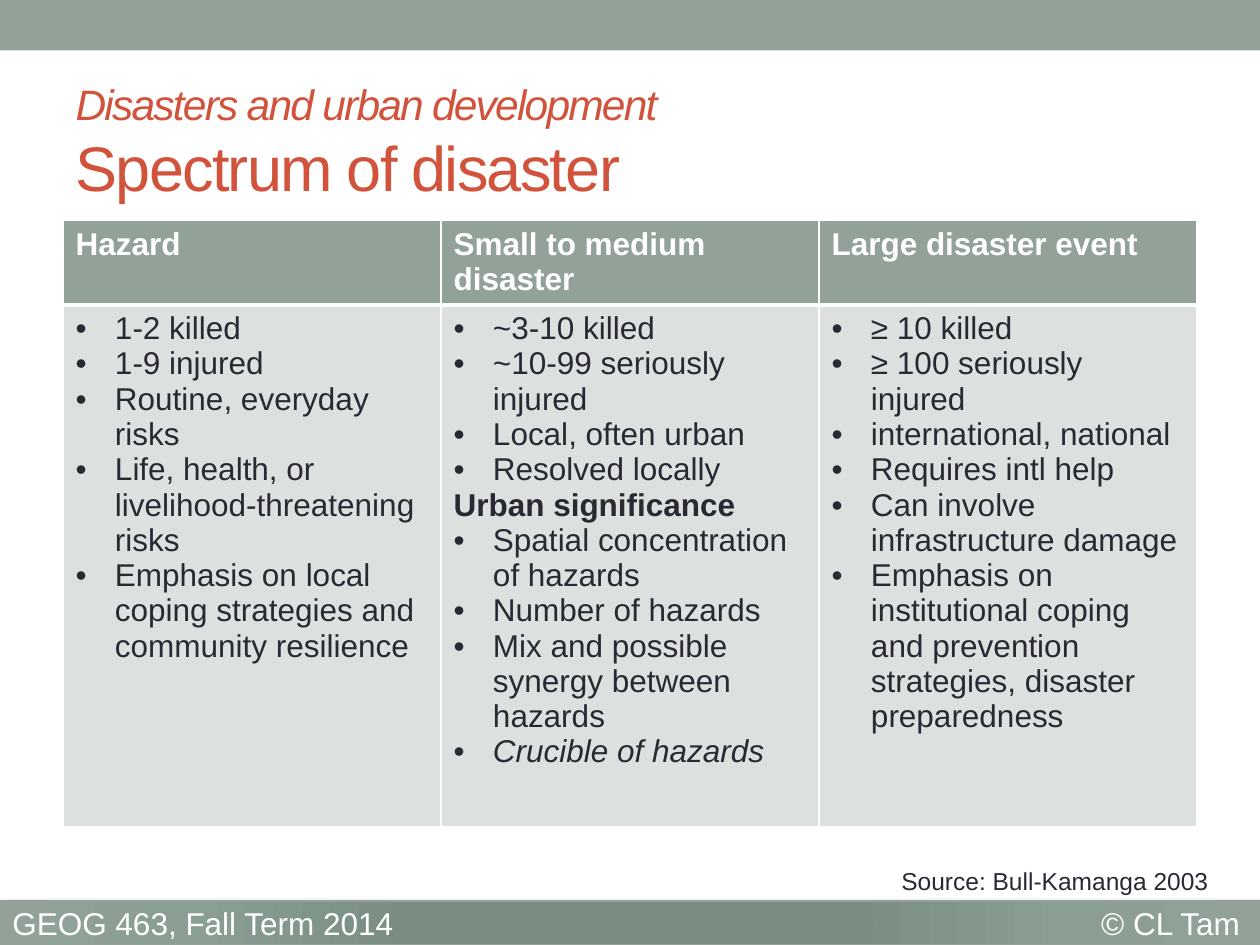
from lxml.etree import SubElement
from pptx import Presentation
from pptx.dml.color import RGBColor
from pptx.enum.shapes import MSO_SHAPE as Shape
from pptx.enum.text import MSO_ANCHOR as Anchor, MSO_AUTO_SIZE as AutoSize, PP_ALIGN as Align
from pptx.oxml import parse_xml
from pptx.oxml.ns import nsdecls, qn
from pptx.util import Pt

FONT = "Arial"
COLORS = {
    "sage": "93A299",
    "sage_dark": "7B8E82",
    "sage_deep": "7B8D83",
    "sage_mid": "8A9E92",
    "pale": "DCE0DE",
    "accent": "D2533C",
    "ink": "292934",
    "white": "FFFFFF",
    "black": "000000",
}
FOOTER_STOPS = [(0, "sage_dark"), (34, "sage_deep"), (70, "sage_mid"), (100, "sage")]
INDENT = 22.5

HEADINGS = ["Hazard", "Small to medium disaster", "Large disaster event"]
SUBHEADING = "Urban significance"
EMPHASIS = "Crucible of hazards"
FEATURES = [
    [
        "1-2 killed",
        "1-9 injured",
        "Routine, everyday risks",
        "Life, health, or livelihood-threatening risks",
        "Emphasis on local coping strategies and community resilience",
    ],
    [
        "~3-10 killed",
        "~10-99 seriously injured",
        "Local, often urban",
        "Resolved locally",
        SUBHEADING,
        "Spatial concentration of hazards",
        "Number of hazards",
        "Mix and possible synergy between hazards",
        EMPHASIS,
    ],
    [
        "≥ 10 killed",
        "≥ 100 seriously injured",
        "international, national",
        "Requires intl help",
        "Can involve infrastructure damage",
        "Emphasis on institutional coping and prevention strategies, disaster preparedness",
    ],
]


def rgb(name):
    return RGBColor.from_string(COLORS[name])


def add_text(paragraph, text, size=18, color="ink", bold=False, italic=False, spacing=None):
    run = paragraph.add_run()
    run.text = text
    font = run.font
    font.name, font.size, font.bold, font.italic = FONT, Pt(size), bold, italic
    font.color.rgb = rgb(color)
    if spacing is not None:
        run._r.get_or_add_rPr().set("spc", str(spacing * 100))


def add_bar(slide, box):
    bar = slide.shapes.add_shape(Shape.RECTANGLE, *map(Pt, box))
    bar.shadow.inherit = False
    bar.fill.solid()
    bar.fill.fore_color.rgb = rgb("sage")
    bar.line.fill.background()
    return bar


def shade_footer(bar):
    """Give the bar its radial gradient and soft shadow."""
    stops = "".join(
        f'<a:gs pos="{pos * 1000}"><a:srgbClr val="{COLORS[name]}"/></a:gs>'
        for pos, name in FOOTER_STOPS
    )
    gradient = parse_xml(
        f'<a:gradFill {nsdecls("a")} rotWithShape="1"><a:gsLst>{stops}</a:gsLst>'
        '<a:path path="circle"><a:fillToRect l="100000" t="100000" r="100000" b="100000"/>'
        "</a:path></a:gradFill>"
    )
    properties = bar._element.spPr
    properties.replace(properties.find(qn("a:solidFill")), gradient)
    shadow = SubElement(properties.find(qn("a:effectLst")), qn("a:outerShdw"),
                        blurRad=str(Pt(3)), dist=str(Pt(2)), dir=str(45 * 60000))
    shade = SubElement(shadow, qn("a:srgbClr"), val=COLORS["black"])
    SubElement(shade, qn("a:alpha"), val="60000")


def add_footer(slide, box, course, author):
    bar = add_bar(slide, box)
    bar.line.color.rgb = rgb("sage")
    bar.line.width = Pt(0.75)
    shade_footer(bar)
    bar.text_frame.vertical_anchor = Anchor.MIDDLE
    line = bar.text_frame.paragraphs[0]
    line.alignment = Align.LEFT
    tabs = SubElement(line._p.get_or_add_pPr(), qn("a:tabLst"))
    SubElement(tabs, qn("a:tab"), pos=str(Pt(box[2] - 18.5)), algn="r")
    add_text(line, f"{course}\t{author}", color="white")


def add_title(slide, box, topic, heading):
    title = slide.shapes.title
    title.left, title.top, title.width, title.height = map(Pt, box)
    frame = title.text_frame
    frame.auto_size = AutoSize.NONE
    frame.vertical_anchor = Anchor.MIDDLE
    line = frame.paragraphs[0]
    line.alignment = Align.LEFT
    add_text(line, topic, size=24.3, color="accent", italic=True, spacing=-1)
    line.add_line_break()
    add_text(line, heading, size=36, color="accent", spacing=-1)


def style_cell(cell, fill, top=1, bottom=1):
    """Set the fill and the white rules, with widths in points."""
    properties = cell._tc.get_or_add_tcPr()
    for side, width in (("L", 1), ("R", 1), ("T", top), ("B", bottom)):
        rule = SubElement(properties, qn(f"a:ln{side}"), w=str(Pt(width)))
        paint = SubElement(rule, qn("a:solidFill"))
        SubElement(paint, qn("a:srgbClr"), val=COLORS["white"])
    cell.fill.solid()
    cell.fill.fore_color.rgb = rgb(fill)


def add_bullet(paragraph):
    properties = paragraph._p.get_or_add_pPr()
    properties.set("marL", str(Pt(INDENT)))
    properties.set("indent", str(-Pt(INDENT)))
    SubElement(properties, qn("a:buFont"), typeface=FONT)
    SubElement(properties, qn("a:buChar"), char="•")


def fill_features(cell, features):
    frame = cell.text_frame
    for index, feature in enumerate(features):
        paragraph = frame.add_paragraph() if index else frame.paragraphs[0]
        if feature != SUBHEADING:
            add_bullet(paragraph)
        add_text(paragraph, feature, bold=feature == SUBHEADING, italic=feature == EMPHASIS)


def add_spectrum(slide, box, row_heights):
    spectrum = slide.shapes.add_table(2, len(HEADINGS), *map(Pt, box)).table
    for row, height in zip(spectrum.rows, row_heights):
        row.height = Pt(height)
    for column, (heading, features) in enumerate(zip(HEADINGS, FEATURES)):
        spectrum.columns[column].width = Pt(box[2] / len(HEADINGS))
        head, body = spectrum.cell(0, column), spectrum.cell(1, column)
        style_cell(head, "sage", bottom=3)
        style_cell(body, "pale", top=3)
        add_text(head.text_frame.paragraphs[0], heading, color="white", bold=True)
        fill_features(body, features)


def add_source(slide, box, citation):
    frame = slide.shapes.add_textbox(*map(Pt, box)).text_frame
    frame.word_wrap = True
    frame.vertical_anchor = Anchor.MIDDLE
    line = frame.paragraphs[0]
    line.alignment = Align.RIGHT
    add_text(line, citation, size=14)


def main():
    deck = Presentation()
    deck.slide_width, deck.slide_height = Pt(720), Pt(540)
    slide = deck.slides.add_slide(deck.slide_layouts[5])
    add_bar(slide, (0, 0, 720, 28.8))
    add_footer(slide, (0, 514.8, 720, 25.2), "GEOG 463, Fall Term 2014", "© CL Tam")
    add_title(slide, (36, 41.8, 648, 77.8), "Disasters and urban development",
              "Spectrum of disaster")
    add_spectrum(slide, (36, 126, 648, 346.3), (48.2, 298.1))
    add_source(slide, (24.5, 495.4, 673.2, 15.8), "Source: Bull-Kamanga 2003")
    deck.save("out.pptx")


if __name__ == "__main__":
    main()
